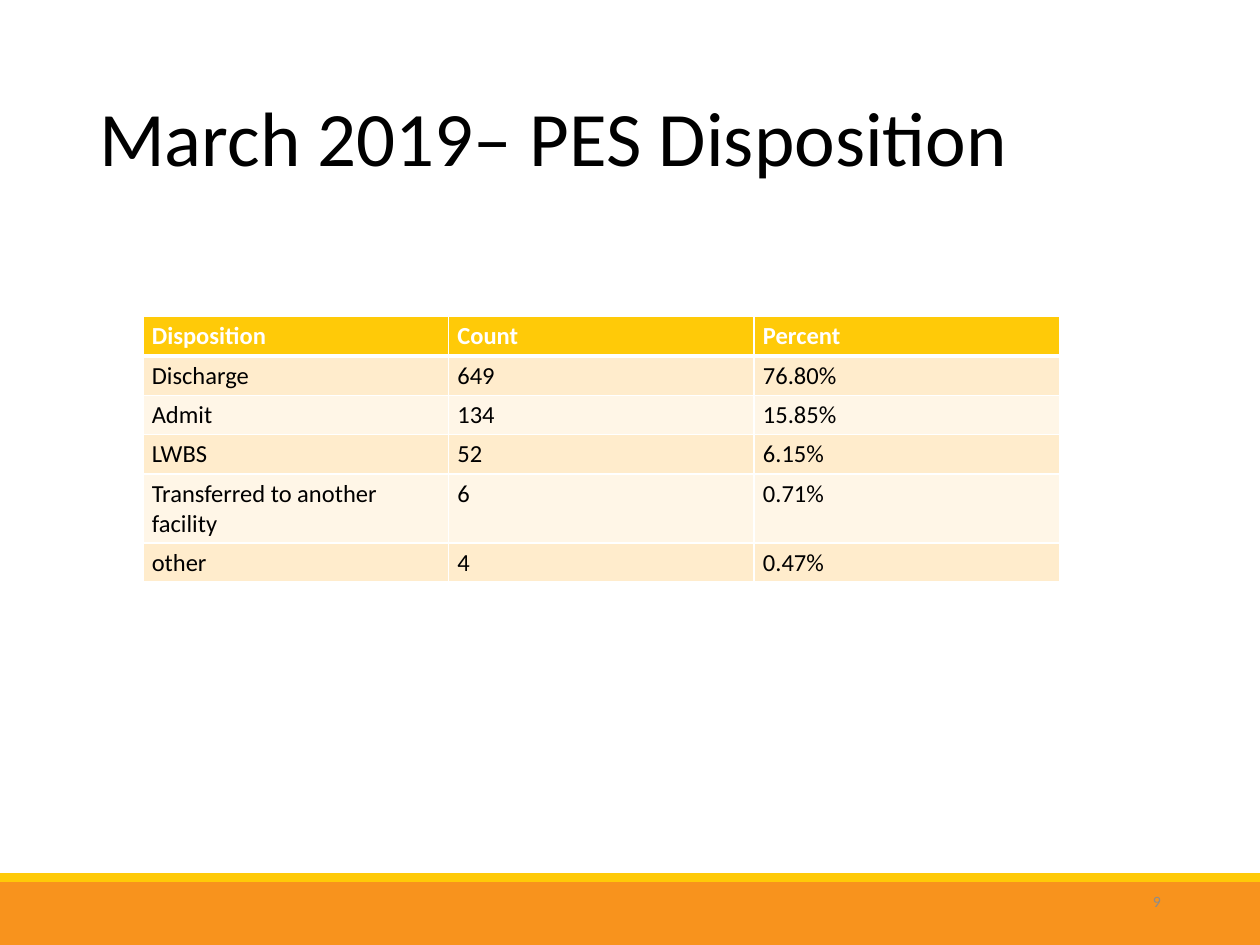
from dataclasses import dataclass

from lxml import etree
from pptx import Presentation
from pptx import util as u
from pptx.dml.color import RGBColor
from pptx.enum import shapes, text
from pptx.oxml import ns


@dataclass(frozen=True)
class Theme:
    font: str = "Calibri"
    black: str = "000000"
    white: str = "FFFFFF"
    gray: str = "8C8C8C"
    orange: str = "F8931D"
    yellow: str = "FFCA08"
    bands: tuple = ("FFECCC", "FFF6E7")
    title_size: int = 44
    table_size: int = 14
    number_size: int = 9


def set_all(target, values):
    for name, value in values.items():
        setattr(target, name, value)


class SlideBuilder:
    def __init__(self, slide, theme):
        self.slide = slide
        self.theme = theme

    def add_words(self, frame, words, size, color, bold=False, **paragraph_format):
        paragraph = frame.paragraphs[0]
        set_all(paragraph, paragraph_format)
        run = paragraph.add_run()
        run.text = words
        set_all(run.font, {"name": self.theme.font, "size": u.Pt(size), "bold": bold})
        run.font.color.rgb = RGBColor.from_string(color)

    def bar(self, top, height, color):
        shape = self.slide.shapes.add_shape(
            shapes.MSO_SHAPE.RECTANGLE, 0, u.Cm(top), u.Cm(25.4), u.Cm(height))
        shape.shadow.inherit = False
        shape.fill.solid()
        shape.fill.fore_color.rgb = RGBColor.from_string(color)
        shape.line.fill.background()

    def label(self, box, words, size, color, **paragraph_format):
        shape = self.slide.shapes.add_textbox(*map(u.Cm, box))
        set_all(shape.text_frame, {
            "word_wrap": True, "vertical_anchor": text.MSO_ANCHOR.MIDDLE})
        self.add_words(shape.text_frame, words, size, color, **paragraph_format)

    def border(self, cell, side, width):
        properties = cell._tc.get_or_add_tcPr()
        line = etree.SubElement(properties, ns.qn(f"a:ln{side}"), w=str(u.Pt(width)))
        fill = etree.SubElement(line, ns.qn("a:solidFill"))
        etree.SubElement(fill, ns.qn("a:srgbClr"), val=self.theme.white)

    def cell(self, cell, words, row):
        theme = self.theme
        header = row == 0
        for side in "LRTB":
            heavy = (header and side == "B") or (row == 1 and side == "T")
            self.border(cell, side, 3 if heavy else 1)
        cell.fill.solid()
        cell.fill.fore_color.rgb = RGBColor.from_string(
            theme.yellow if header else theme.bands[(row - 1) % 2])
        set_all(cell, {
            "margin_left": u.Cm(0.18), "margin_right": u.Cm(0.18),
            "margin_top": u.Cm(0.1), "margin_bottom": u.Cm(0.1)})
        self.add_words(cell.text_frame, words, theme.table_size,
                       theme.white if header else theme.black, header)

    def table(self, left, top, column_width, row_height, rows):
        columns = len(rows[0])
        table = self.slide.shapes.add_table(
            len(rows), columns, u.Cm(left), u.Cm(top),
            u.Cm(column_width * columns), u.Cm(row_height * len(rows))).table
        for column in table.columns:
            column.width = u.Cm(column_width)
        for index, values in enumerate(rows):
            table.rows[index].height = u.Cm(row_height)
            for position, words in enumerate(values):
                self.cell(table.cell(index, position), words, index)


def main():
    presentation = Presentation()
    set_all(presentation, {"slide_width": u.Cm(25.4), "slide_height": u.Cm(19.05)})
    theme = Theme()
    builder = SlideBuilder(
        presentation.slides.add_slide(presentation.slide_layouts[6]), theme)

    builder.bar(17.78, 1.27, theme.orange)
    builder.bar(17.6, 0.18, theme.yellow)
    builder.label((1.75, 1.02, 21.9, 3.68), "March 2019– PES Disposition",
                  theme.title_size, theme.black, line_spacing=0.9)
    builder.label((17.93, 17.65, 5.72, 1.02), "9", theme.number_size, theme.gray,
                  alignment=text.PP_ALIGN.RIGHT)
    builder.table(2.88, 6.38, 6.16, 0.76, [
        ("Disposition", "Count", "Percent"),
        ("Discharge", "649", "76.80%"),
        ("Admit", "134", "15.85%"),
        ("LWBS", "52", "6.15%"),
        ("Transferred to another facility", "6", "0.71%"),
        ("other", "4", "0.47%"),
    ])
    presentation.save("out.pptx")


if __name__ == "__main__":
    main()
